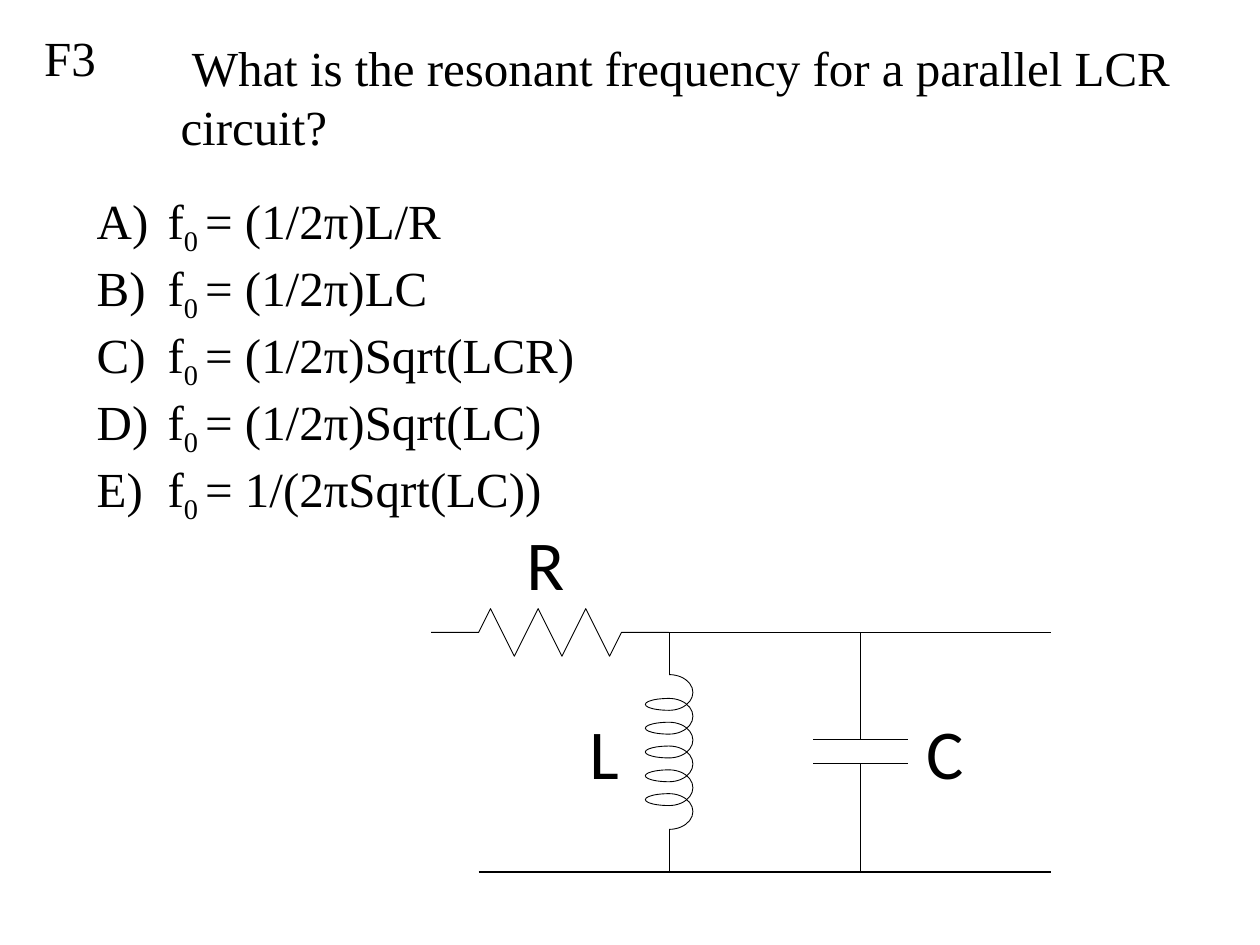
from pptx import Presentation
from pptx.dml.color import RGBColor
from pptx.enum.shapes import MSO_CONNECTOR as CONN, MSO_SHAPE as SHAPE
from pptx.oxml import parse_xml
from pptx.oxml.ns import nsdecls
from pptx.util import Cm, Pt

# Content
TAG = "F3"
QUESTION = " What is the resonant frequency for a parallel LCR circuit?"
ANSWERS = ["(1/2π)L/R", "(1/2π)LC", "(1/2π)Sqrt(LCR)",
           "(1/2π)Sqrt(LC)", "1/(2πSqrt(LC))"]
LABELS = [("R", 10.36, 10.36, 1.3), ("L", 11.63, 14.17, 1.12),
          ("C", 18.42, 14.17, 1.3)]
SERIF, SANS, BLACK = "Times New Roman", "Calibri", "000000"

# Circuit geometry in cm
STEP = 0.48
TOP, BOTTOM = 12.75, 17.58
X_IN, X_LEFT, X_COIL, X_CAP, X_RIGHT = 8.69, 9.65, 13.49, 17.35, 21.18
COIL_TOP, COIL_BOTTOM, TURNS = 13.6, 16.72, 6
PLATES, PLATE_HALF = (14.91, 15.39), 0.96
THIN, THICK = 0.5, 0.75


def rgb(color):
    return RGBColor.from_string(color)


def style_runs(p, font, size):
    for r in p.runs:
        r.font.name, r.font.size = font, Pt(size)
        r.font.color.rgb = rgb(BLACK)


def textbox(x, y, w, h, text="", font=SERIF, size=28, wrap=False):
    sp = s.shapes.add_textbox(Cm(x), Cm(y), Cm(w), Cm(h))
    tf = sp.text_frame
    tf.word_wrap = wrap
    tf.text = text
    style_runs(tf.paragraphs[0], font, size)
    return tf


def outline(sp, width):
    sp.line.color.rgb = rgb(BLACK)
    sp.line.width = Pt(width)


def line(x1, y1, x2, y2, width=THIN):
    cxn = s.shapes.add_connector(CONN.STRAIGHT, Cm(x1), Cm(y1), Cm(x2), Cm(y2))
    outline(cxn, width)
    cxn._element.spPr.append(parse_xml(f"<a:effectLst {nsdecls('a')}/>"))


def half_loop(cy, ry, start, end):
    """Half an ellipse centred on the coil axis; angles in degrees."""
    sp = s.shapes.add_shape(SHAPE.ARC, Cm(X_COIL - STEP), Cm(cy - ry),
                            Cm(2 * STEP), Cm(2 * ry))
    # Angles are stored in 1/60000 degree, adjustments in 1/100000
    sp.adjustments[0], sp.adjustments[1] = start * 0.6, end * 0.6
    sp.fill.background()
    sp.shadow.inherit = False
    outline(sp, THIN)


prs = Presentation()
prs.slide_width, prs.slide_height = Cm(25.4), Cm(19.05)
s = prs.slides.add_slide(prs.slide_layouts[6])

# Answers
tf = textbox(1.7, 2.54, 22.86, 11.79, wrap=True)
tf.margin_top = Cm(1.3)
for i, formula in enumerate(ANSWERS):
    p = tf.paragraphs[0] if i == 0 else tf.add_paragraph()
    for part in ("f", "0 ", "= " + formula):
        p.add_run().text = part
    style_runs(p, SERIF, 28)
    p.runs[1].font._element.set("baseline", "-25000")
    pPr = p._p.get_or_add_pPr()
    pPr.set("marL", str(Cm(1.43)))
    pPr.set("indent", str(-Cm(1.43)))
    for bullet in (f'<a:buFont {nsdecls("a")} typeface="{SERIF}"/>',
                   f'<a:buAutoNum {nsdecls("a")} type="alphaUcParenR"/>'):
        pPr.append(parse_xml(bullet))

# Question
textbox(3.39, 0.64, 20.96, 2.64, QUESTION, wrap=True)
textbox(0.64, 0.43, 1.63, 1.45, TAG)

# Capacitor
for plate_y, rail_y in zip(PLATES, (TOP, BOTTOM)):
    line(X_CAP, rail_y, X_CAP, plate_y)
    line(X_CAP - PLATE_HALF, plate_y, X_CAP + PLATE_HALF, plate_y)

# Resistor
peaks = [(X_LEFT + STEP * (i + 0.5), TOP + STEP * (-1 if i % 2 == 0 else 1))
         for i in range(6)]
points = [(X_IN, TOP), (X_LEFT, TOP), *peaks,
          (X_LEFT + 6 * STEP, TOP), (X_COIL, TOP)]
fb = s.shapes.build_freeform(Cm(points[0][0]), Cm(points[0][1]))
fb.add_line_segments([(Cm(x), Cm(y)) for x, y in points[1:]], close=False)
resistor = fb.convert_to_shape()
resistor.fill.background()
resistor.shadow.inherit = False
outline(resistor, THIN)

# Inductor: wide right halves joined by flat left halves
RY_RIGHT, RY_LEFT = 0.36, 0.12
for i in range(TURNS):
    y = COIL_TOP + i * STEP
    half_loop(y + RY_RIGHT, RY_RIGHT, 270, 90)
    if i:
        half_loop(y + RY_LEFT, RY_LEFT, 90, 270)
line(X_COIL, COIL_TOP, X_COIL, TOP)
line(X_COIL, BOTTOM, X_COIL, COIL_BOTTOM)

# Rails
for y, xs in ((TOP, (X_COIL, X_CAP, X_RIGHT)),
              (BOTTOM, (X_LEFT, X_COIL, X_CAP, X_RIGHT))):
    for x1, x2 in zip(xs, xs[1:]):
        line(x1, y, x2, y, THICK)

# Component labels
for name, x, y, w in LABELS:
    textbox(x, y, w, 1.96, name, SANS, 40)

prs.save("out.pptx")
